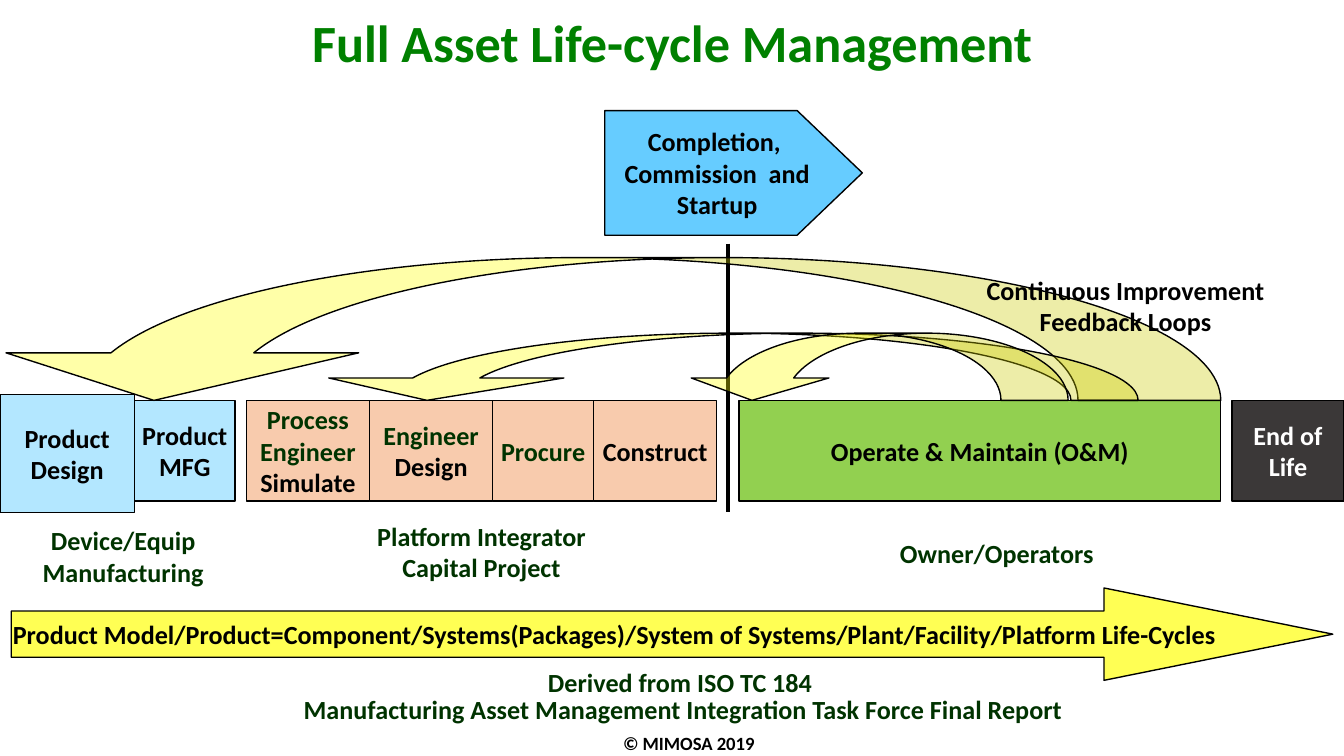
from lxml import etree
from pptx import Presentation
from pptx.dml.color import RGBColor
from pptx.enum.shapes import MSO_CONNECTOR, MSO_SHAPE
from pptx.enum.text import MSO_ANCHOR, PP_ALIGN
from pptx.oxml.ns import qn
from pptx.util import Pt

PX = 9525  # 96 px to the inch
COLORS = {
    "black": "000000", "white": "FFFFFF", "title": "008000", "green": "003300",
    "product": "B3E7FF", "project": "F8CBAD", "operate": "92D050",
    "end": "3B3838", "startup": "66CCFF", "yellow": "FFFF00",
}
STAGE_TOP, STAGE_HEIGHT = 286, 72


def rgb(name):
    return RGBColor.from_string(COLORS[name])


def box(*lengths):
    return [length * PX for length in lengths]


def write(shape, lines, color="black", size=14, anchor=MSO_ANCHOR.TOP, wrap=True):
    """Write one centred paragraph per line; a line is a text or a (text, color) pair."""
    frame = shape.text_frame
    frame.word_wrap = wrap
    frame.vertical_anchor = anchor
    for index, line in enumerate(lines):
        text, line_color = (line, color) if isinstance(line, str) else line
        paragraph = frame.paragraphs[0] if index == 0 else frame.add_paragraph()
        paragraph.alignment = PP_ALIGN.CENTER
        run = paragraph.add_run()
        run.text = text
        run.font.name = "Calibri"
        run.font.size = Pt(size)
        run.font.bold = True
        run.font.color.rgb = rgb(line_color)
    return frame


def add_label(slide, bounds, lines, color="green", **style):
    return write(slide.shapes.add_textbox(*box(*bounds)), lines, color, **style)


def add_block(slide, kind, bounds, fill, adjustments=(), opacity=100):
    shape = slide.shapes.add_shape(kind, *box(*bounds))
    shape.shadow.inherit = False
    shape.fill.solid()
    shape.fill.fore_color.rgb = rgb(fill)
    shape.line.color.rgb = rgb("black")
    shape.line.width = Pt(0.75)
    for index, value in enumerate(adjustments):
        shape.adjustments[index] = value
    if opacity < 100:
        color = shape._element.spPr.find(qn("a:solidFill"))[0]
        etree.SubElement(color, qn("a:alpha"), val=str(opacity * 1000))
    return shape


def add_stage(slide, left, width, fill, lines, color="black",
              top=STAGE_TOP, height=STAGE_HEIGHT):
    shape = add_block(slide, MSO_SHAPE.RECTANGLE, (left, top, width, height), fill)
    frame = write(shape, lines, color, anchor=MSO_ANCHOR.MIDDLE)
    frame.margin_left = frame.margin_right = 0


def add_feedback_loop(slide, left, top, width, head):
    """Arc from right to left that lands on the row of stages."""
    bounds = (left, top, width, STAGE_TOP - top)
    shape = add_block(slide, MSO_SHAPE.CURVED_DOWN_ARROW, bounds, "yellow",
                      (head / 2, head, 0.333), opacity=34)
    shape._element.spPr.find(qn("a:xfrm")).set("flipH", "1")


def add_divider(slide, x, top, bottom):
    line = slide.shapes.add_connector(MSO_CONNECTOR.STRAIGHT, *box(x, top, x, bottom))
    line.line.color.rgb = rgb("black")
    line.line.width = Pt(2.25)
    etree.SubElement(line._element.spPr, qn("a:effectLst"))


def add_stages(slide):
    add_stage(slide, 528, 344, "operate", ["Operate & Maintain (O&M)"])
    add_stage(slide, 880, 80, "end", ["End of Life"], "white")
    add_stage(slide, 0, 96, "product", ["Product", "Design"], top=282, height=84)
    add_stage(slide, 96, 72, "product", ["Product", "MFG"])
    left = 176
    for width, lines in (
        (88, ["Process", "Engineer", ("Simulate", "black")]),
        (88, ["Engineer", ("Design", "black")]),
        (72, ["Procure"]),
        (88, [("Construct", "black")]),
    ):
        add_stage(slide, left, width, "project", lines, "green")
        left += width


def add_arrows(slide):
    life_cycle = add_block(slide, MSO_SHAPE.RIGHT_ARROW, (8, 420, 944, 66), "yellow",
                           (0.5, 2.477), opacity=67)
    write(life_cycle, ["Product Model/Product=Component/Systems(Packages)/"
                       "System of Systems/Plant/Facility/Platform Life-Cycles"],
          anchor=MSO_ANCHOR.MIDDLE, wrap=False)
    startup = add_block(slide, MSO_SHAPE.PENTAGON, (432, 79, 184, 89), "startup", (0.523,))
    write(startup, ["Completion, ", "Commission  and Startup"], anchor=MSO_ANCHOR.MIDDLE)
    for loop in ((-16, 184, 888, 2.47), (221, 238, 592, 3.5), (488, 238, 275, 2.05)):
        add_feedback_loop(slide, *loop)


def add_labels(slide):
    add_label(slide, (66, 4, 828, 57), ["Full Asset Life-cycle Management"], "title",
              size=28, anchor=MSO_ANCHOR.MIDDLE).paragraphs[0].line_spacing = 0.9
    add_label(slide, (664, 191, 280, 55), ["Continuous Improvement Feedback Loops"], "black")
    add_label(slide, (0, 370, 176, 55), ["Device/Equip", "Manufacturing"])
    add_label(slide, (232, 367, 224, 55), ["Platform Integrator", "Capital Project"])
    add_label(slide, (600, 379, 224, 33), ["Owner/Operators"])
    derivation = add_label(slide, (136, 478, 704, 45), [
        "Derived from ISO TC 184 ",
        "Manufacturing Asset Management Integration Task Force Final Report"])
    for paragraph in derivation.paragraphs:
        paragraph.line_spacing = Pt(12)
    derivation.paragraphs[1].space_before = Pt(2)
    add_label(slide, (400, 518, 184, 26), ["© MIMOSA 2019"], "black", size=10)


def main():
    presentation = Presentation()
    presentation.slide_width, presentation.slide_height = box(960, 540)
    slide = presentation.slides.add_slide(presentation.slide_layouts[6])
    add_divider(slide, 520, 174, 366)
    add_stages(slide)
    add_arrows(slide)
    add_labels(slide)
    presentation.save("out.pptx")


if __name__ == "__main__":
    main()
